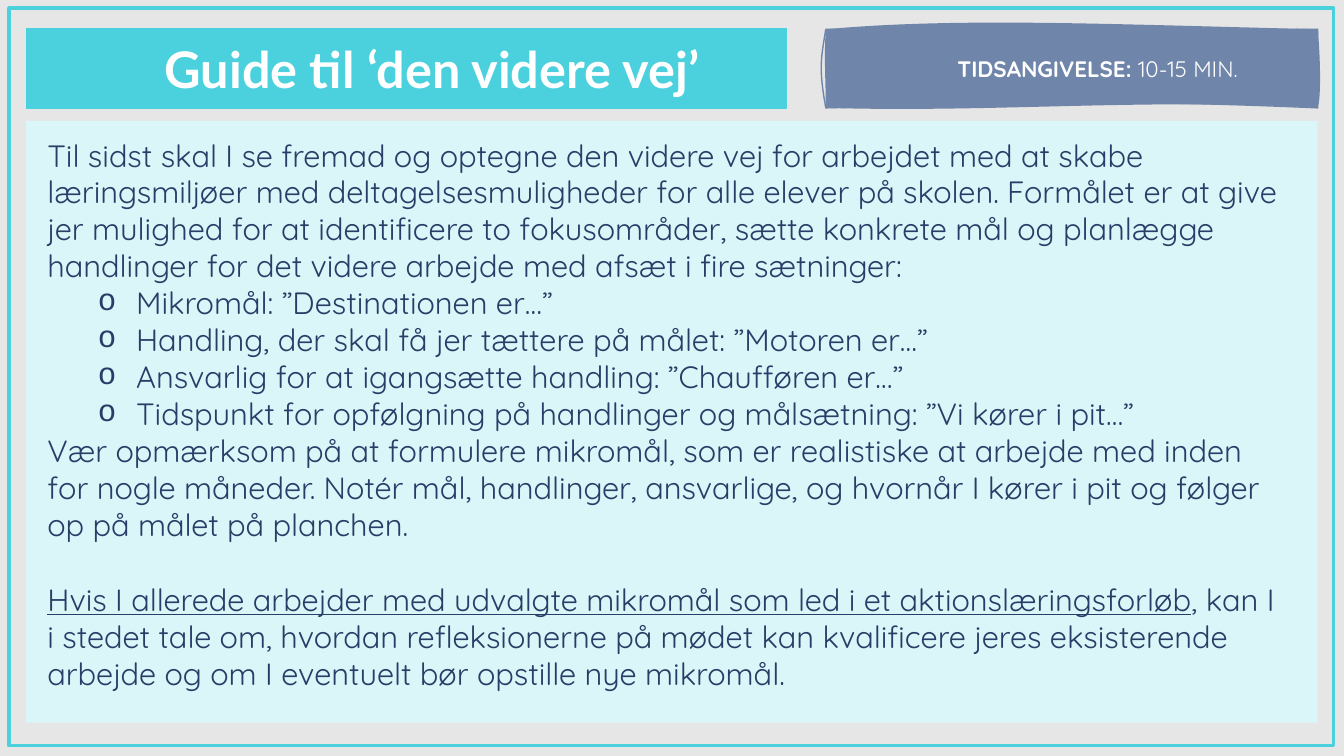
from lxml.etree import SubElement
from pptx import Presentation
from pptx.dml.color import RGBColor
from pptx.enum.shapes import MSO_SHAPE
from pptx.enum.text import MSO_ANCHOR, MSO_AUTO_SIZE, PP_ALIGN
from pptx.oxml.ns import qn
from pptx.util import Inches, Pt

COLORS = {"bg": "E6E6E6", "teal": "4BD1DD", "slate": "7085AA",
          "panel": "DBF6F8", "text": "273F68", "white": "FFFFFF"}

TITLE_FILL = [((2.75, -0.12), (4.41, -0.05), (7.54, 0)),
              ((7.47, 0.09), (7.49, 0.43), (7.54, 0.79)),
              ((6.06, 0.69), (3.67, 0.84), (0, 0.79)),
              ((-0.02, 0.67), (-0.03, 0.33), (0, 0))]
TITLE_EDGE = [((1.28, 0.04), (6.59, 0.01), (7.54, 0)),
              ((7.57, 0.15), (7.52, 0.63), (7.54, 0.79)),
              ((5.49, 0.69), (2.6, 0.75), (0, 0.79)),
              ((0.06, 0.53), (-0.06, 0.12), (0, 0))]
TIME_FILL = [((1.32, -0.12), (2.8, -0.05), (4.88, 0)),
             ((4.91, 0.35), (4.91, 0.68), (4.88, 0.78)),
             ((3.2, 0.68), (1.68, 0.83), (0, 0.78)),
             ((0, 0.49), (-0.02, 0.3), (0, 0))]
TIME_EDGE = [((2, 0.04), (3.67, 0.01), (4.88, 0)),
             ((4.88, 0.14), (4.81, 0.58), (4.88, 0.78)),
             ((2.62, 0.68), (1.47, 0.74), (0, 0.78)),
             ((-0.07, 0.39), (-0.05, 0.3), (0, 0))]

INTRO = ("Til sidst skal I se fremad og optegne den videre vej for arbejdet med at skabe "
         "læringsmiljøer med deltagelsesmuligheder for alle elever på skolen. Formålet er at give "
         "jer mulighed for at identificere to fokusområder, sætte konkrete mål og planlægge "
         "handlinger for det videre arbejde med afsæt i fire sætninger:")
SENTENCES = ["Mikromål: ”Destinationen er…”",
             "Handling, der skal få jer tættere på målet: ”Motoren er…”",
             "Ansvarlig for at igangsætte handling: ”Chaufføren er…”",
             "Tidspunkt for opfølgning på handlinger og målsætning: ”Vi kører i pit…”"]
ADVICE = ("Vær opmærksom på at formulere mikromål, som er realistiske at arbejde med inden "
          "for nogle måneder. Notér mål, handlinger, ansvarlige, og hvornår I kører i pit og følger "
          "op på målet på planchen.")
CONDITION = "Hvis I allerede arbejder med udvalgte mikromål som led i et aktionslæringsforløb"
ALTERNATIVE = (", kan I i stedet tale om, hvordan refleksionerne på mødet kan kvalificere jeres "
               "eksisterende arbejde og om I eventuelt bør opstille nye mikromål.")


def rgb(name):
    """Return the named palette colour."""
    return RGBColor.from_string(COLORS[name])


def paint(sp, fill=None, line=None, width=1):
    """Set fill and line of a shape, leaving out what is not named."""
    sp.shadow.inherit = False
    if fill:
        sp.fill.solid()
        sp.fill.fore_color.rgb = rgb(fill)
    else:
        sp.fill.background()
    if line:
        sp.line.color.rgb = rgb(line)
        sp.line.width = Pt(width)
    else:
        sp.line.fill.background()


def add_rect(s, box, **style):
    """Draw a rectangle in the box."""
    paint(s.shapes.add_shape(MSO_SHAPE.RECTANGLE, *map(Inches, box)), **style)


def add_curves(paths, box, curves, **attrs):
    """Append one closed path of cubic curves to a path list."""
    outline = SubElement(paths, qn("a:path"), w=str(Inches(box[2])), h=str(Inches(box[3])), **attrs)
    for tag, points in [("moveTo", [(0, 0)])] + [("cubicBezTo", c) for c in curves]:
        step = SubElement(outline, qn(f"a:{tag}"))
        for x, y in points:
            SubElement(step, qn("a:pt"), x=str(Inches(x)), y=str(Inches(y)))
    SubElement(outline, qn("a:close"))


def add_brush(s, box, fill_curves, edge_curves):
    """Add a freeform with a loose outline and a brushed fill."""
    left, top, width, height = map(Inches, box)
    fb = s.shapes.build_freeform(left, top)
    fb.add_line_segments([(left + width, top), (left + width, top + height), (left, top + height)])
    sp = fb.convert_to_shape()
    paths = sp.element.spPr.find(".//" + qn("a:pathLst"))
    paths.remove(paths[0])
    add_curves(paths, box, edge_curves, fill="none")
    add_curves(paths, box, fill_curves, stroke="0")
    return sp


def place_text(sp, box, left_inset=0.08):
    """Fit a text shape to the box, on top, and return its frame."""
    sp.left, sp.top, sp.width, sp.height = map(Inches, box)
    sp.element.getparent().append(sp.element)
    tf = sp.text_frame
    tf.word_wrap = True
    tf.auto_size = MSO_AUTO_SIZE.NONE
    tf.vertical_anchor = MSO_ANCHOR.MIDDLE
    tf.margin_left, tf.margin_right = Inches(left_inset), Inches(0.08)
    tf.margin_top = tf.margin_bottom = Inches(0.04)
    return tf


def add_run(p, text, font, size, color, bold=False, underline=False):
    """Append a formatted run to a paragraph."""
    r = p.add_run()
    r.text = text
    r.font.name, r.font.size = font, Pt(size)
    r.font.bold, r.font.underline = bold, underline
    r.font.color.rgb = rgb(color)


def add_banner(s, box, fill_curves, edge_curves, color, runs, title=None):
    """Draw a brushed banner with one centred line, in the title if given."""
    brush = add_brush(s, box, fill_curves, edge_curves)
    sp = title or brush
    p = place_text(sp, box, 0.59).paragraphs[0]
    if title:
        title.element.spPr.insert(1, brush.element.spPr.find(qn("a:custGeom")))
        brush.element.getparent().remove(brush.element)
    paint(sp, fill=color, line=color)
    p.alignment = PP_ALIGN.CENTER
    for run in runs:
        add_run(p, *run)


def set_bullet(p, char=None):
    """Give a paragraph a hanging bullet, or none."""
    pPr = p._p.get_or_add_pPr()
    pPr.set("marL", str(Inches(0.88 if char else 0)))
    pPr.set("indent", str(Inches(-0.38 if char else 0)))
    if char:
        p.level = 1
        SubElement(pPr, qn("a:buFont")).set("typeface", "Courier New")
        SubElement(pPr, qn("a:buChar")).set("char", char)
    else:
        SubElement(pPr, qn("a:buNone"))


def add_guide(s, sp, box):
    """Draw the pale panel and write the guide text in it."""
    left, top, width, height = box
    add_rect(s, box, fill="panel")
    tf = place_text(sp, (left + 0.13, top + 0.2, width - 0.43, height - 0.56))
    level = SubElement(tf._txBody.find(qn("a:lstStyle")), qn("a:lvl2pPr"))
    SubElement(level, qn("a:defRPr")).set("sz", "1800")
    rows = [(None, 0, [(INTRO, False)])]
    rows += [("o", 0, [(text, False)]) for text in SENTENCES]
    rows += [(None, 0, [(ADVICE, False)]),
             (None, 27, [(CONDITION, True), (ALTERNATIVE, False)])]
    for i, (bullet, gap, runs) in enumerate(rows):
        p = tf.add_paragraph() if i else tf.paragraphs[0]
        set_bullet(p, bullet)
        p.alignment = PP_ALIGN.LEFT
        p.line_spacing = 1.0
        p.space_before, p.space_after = Pt(gap), Pt(0)
        for text, underline in runs:
            add_run(p, text, "Quicksand", 22, "text", underline=underline)


def main():
    """Build and save the slide."""
    prs = Presentation()
    prs.slide_width, prs.slide_height = Inches(13.33), Inches(7.5)
    s = prs.slides.add_slide(prs.slide_layouts[1])
    s.background.fill.solid()
    s.background.fill.fore_color.rgb = rgb("bg")
    add_rect(s, (0.09, 0.08, 13.14, 7.32), line="teal", width=2.25)
    add_banner(s, (0.26, 0.28, 7.54, 0.79), TITLE_FILL, TITLE_EDGE, "teal",
               [("Guide til ‘den videre vej’", "Lato", 36, "white", True)], s.shapes.title)
    add_banner(s, (8.19, 0.29, 4.88, 0.78), TIME_FILL, TIME_EDGE, "slate",
               [("TIDSANGIVELSE:", "Quicksand", 16, "white", True),
                (" 10-15 MIN.", "Quicksand", 16, "white")])
    add_guide(s, s.placeholders[1], (0.26, 1.2, 12.81, 5.97))
    prs.save("out.pptx")


if __name__ == "__main__":
    main()
